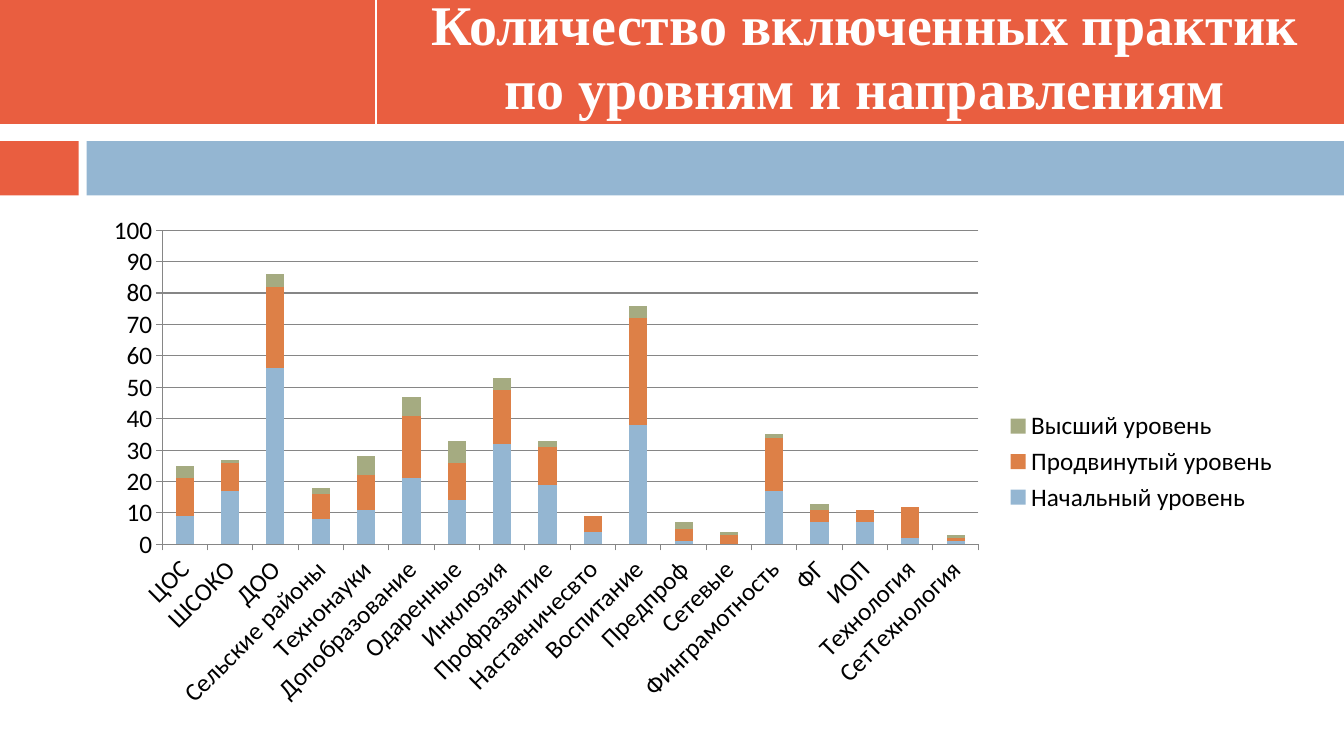
from pptx import Presentation
from pptx.chart.data import CategoryChartData
from pptx.dml.color import RGBColor
from pptx.enum.chart import XL_CHART_TYPE as ChartType, XL_LEGEND_POSITION as LegendPosition
from pptx.enum.chart import XL_TICK_MARK as TickMark
from pptx.enum.shapes import MSO_CONNECTOR as Connector, MSO_SHAPE as Shape
from pptx.enum.text import MSO_ANCHOR as Anchor, MSO_AUTO_SIZE as AutoSize, PP_ALIGN as Align
from pptx.oxml.ns import qn
from pptx.util import Inches, Pt

COLORS = {
    "coral": "E95E40", "blue": "94B6D2", "orange": "DD8047", "green": "A5AB81",
    "white": "FFFFFF", "black": "000000", "gray": "868686",
}
TITLE = "Количество включенных практик по уровням и направлениям"
BANDS = [
    ("coral", 0, 0, 13.33, 1.23),
    ("coral", 0, 1.4, 0.78, 0.54),
    ("blue", 0.86, 1.4, 12.47, 0.54),
]
TITLE_BOX = (3.81, 0, 9.53, 1.16)
CHART_BOX = (0.89, 2.03, 11.89, 5.1)
DIVIDER = (3.73, 0, 3.73, 1.23)
DIRECTIONS = [
    "ЦОС", "ШСОКО", "ДОО", "Сельские районы", "Технонауки", "Допобразование",
    "Одаренные", "Инклюзия", "Профразвитие", "Наставничесвто", "Воспитание",
    "Предпроф", "Сетевые", "Финграмотность", "ФГ", "ИОП", "Технология",
    "СетТехнология",
]
LEVELS = [
    ("Начальный уровень", "blue",
     (9, 17, 56, 8, 11, 21, 14, 32, 19, 4, 38, 1, 0, 17, 7, 7, 2, 1)),
    ("Продвинутый уровень", "orange",
     (12, 9, 26, 8, 11, 20, 12, 17, 12, 5, 34, 4, 3, 17, 4, 4, 10, 1)),
    ("Высший уровень", "green",
     (4, 1, 4, 2, 6, 6, 7, 4, 2, 0, 4, 2, 1, 1, 2, 0, 0, 1)),
]
TITLE_FONT = {"name": "Times New Roman", "size": Pt(40), "bold": True}
TITLE_FRAME = {
    "word_wrap": True, "auto_size": AutoSize.NONE, "vertical_anchor": Anchor.MIDDLE,
    "margin_left": Inches(0.2), "margin_right": Inches(0.2),
    "margin_top": 0, "margin_bottom": 0,
}
CHART_FONT = {"name": "Calibri", "size": Pt(18), "bold": False}


def color(name):
    return RGBColor.from_string(COLORS[name])


def inches(values):
    return [Inches(value) for value in values]


def apply_format(target, settings):
    for attribute, value in settings.items():
        setattr(target, attribute, value)


def format_font(font, settings, color_name):
    apply_format(font, settings)
    font.color.rgb = color(color_name)


def add_bands(slide):
    for color_name, *box in BANDS:
        band = slide.shapes.add_shape(Shape.RECTANGLE, *inches(box))
        band.shadow.inherit = False
        band.fill.solid()
        band.fill.fore_color.rgb = color(color_name)
        band.line.fill.background()
    divider = slide.shapes.add_connector(Connector.STRAIGHT, *inches(DIVIDER))
    divider.line.color.rgb = color("white")
    divider.line.width = Pt(1.5)
    properties = divider.element.spPr
    properties.append(properties.makeelement(qn("a:effectLst"), {}))


def add_title(slide):
    title = slide.shapes.title
    title.left, title.top, title.width, title.height = inches(TITLE_BOX)
    frame = title.text_frame
    frame.text = TITLE
    apply_format(frame, TITLE_FRAME)
    paragraph = frame.paragraphs[0]
    apply_format(paragraph, {"alignment": Align.CENTER, "line_spacing": 0.95})
    format_font(paragraph.runs[0].font, TITLE_FONT, "white")
    title.element.getparent().append(title.element)


def add_levels_chart(slide):
    data = CategoryChartData()
    data.categories = DIRECTIONS
    for name, _, values in LEVELS:
        data.add_series(name, values)
    chart = slide.shapes.add_chart(ChartType.COLUMN_STACKED, *inches(CHART_BOX), data).chart
    format_font(chart.font, CHART_FONT, "black")
    chart.has_title = False
    chart.has_legend = True
    chart.legend.position = LegendPosition.RIGHT
    chart.legend.include_in_layout = False
    format_font(chart.legend.font, CHART_FONT, "black")

    plot = chart.plots[0]
    plot.gap_width, plot.overlap, plot.vary_by_categories = 150, 100, False
    for series, (_, color_name, _) in zip(plot.series, LEVELS):
        series.format.fill.solid()
        series.format.fill.fore_color.rgb = color(color_name)

    for axis in (chart.category_axis, chart.value_axis):
        axis.major_tick_mark = TickMark.OUTSIDE
        axis.minor_tick_mark = TickMark.NONE
        axis.format.line.color.rgb = color("gray")
        format_font(axis.tick_labels.font, CHART_FONT, "black")
    label_body = chart.category_axis._element.find(qn("c:txPr")).find(qn("a:bodyPr"))
    label_body.set("rot", "-2700000")

    values_axis = chart.value_axis
    values_axis.minimum_scale, values_axis.maximum_scale, values_axis.major_unit = 0, 100, 10
    values_axis.has_major_gridlines = True
    values_axis.major_gridlines.format.line.color.rgb = color("gray")


def main():
    presentation = Presentation()
    presentation.slide_width, presentation.slide_height = inches((13.33, 7.5))
    slide = presentation.slides.add_slide(presentation.slide_layouts[5])
    add_bands(slide)
    add_title(slide)
    add_levels_chart(slide)
    presentation.save("out.pptx")


if __name__ == "__main__":
    main()
